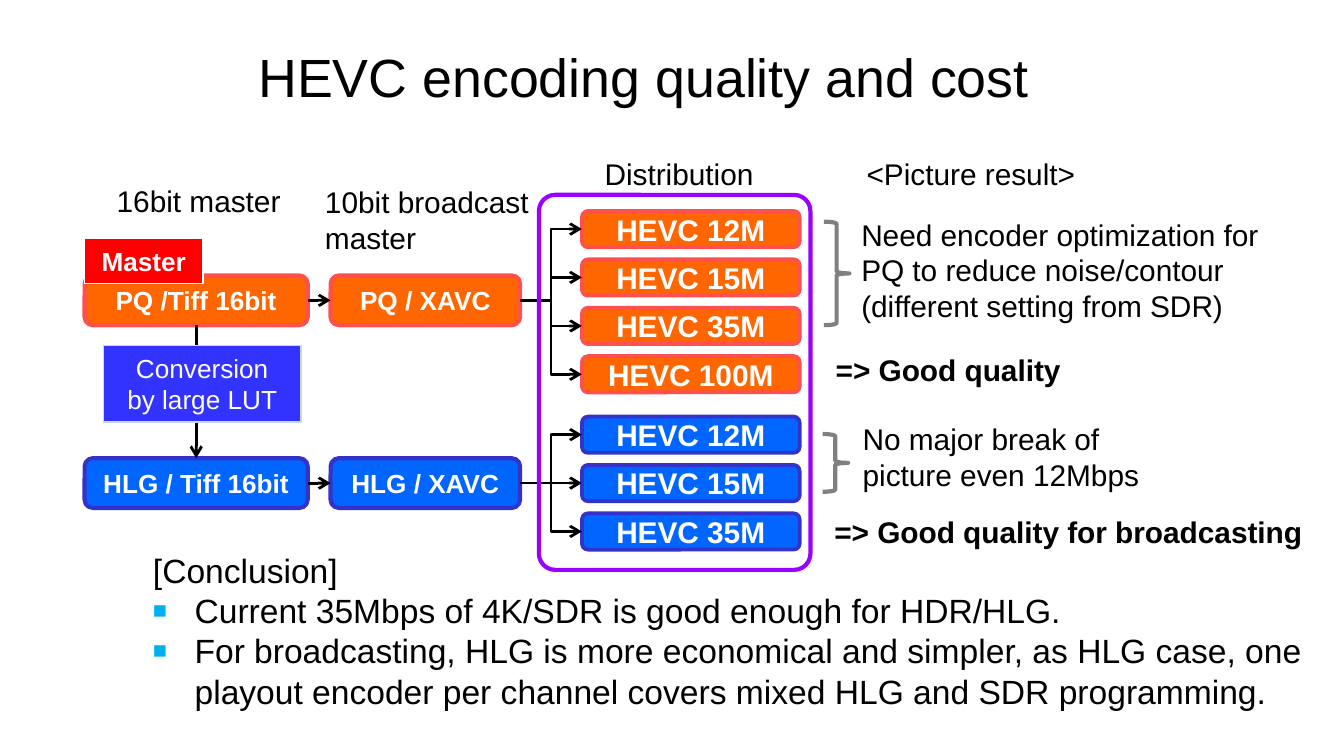
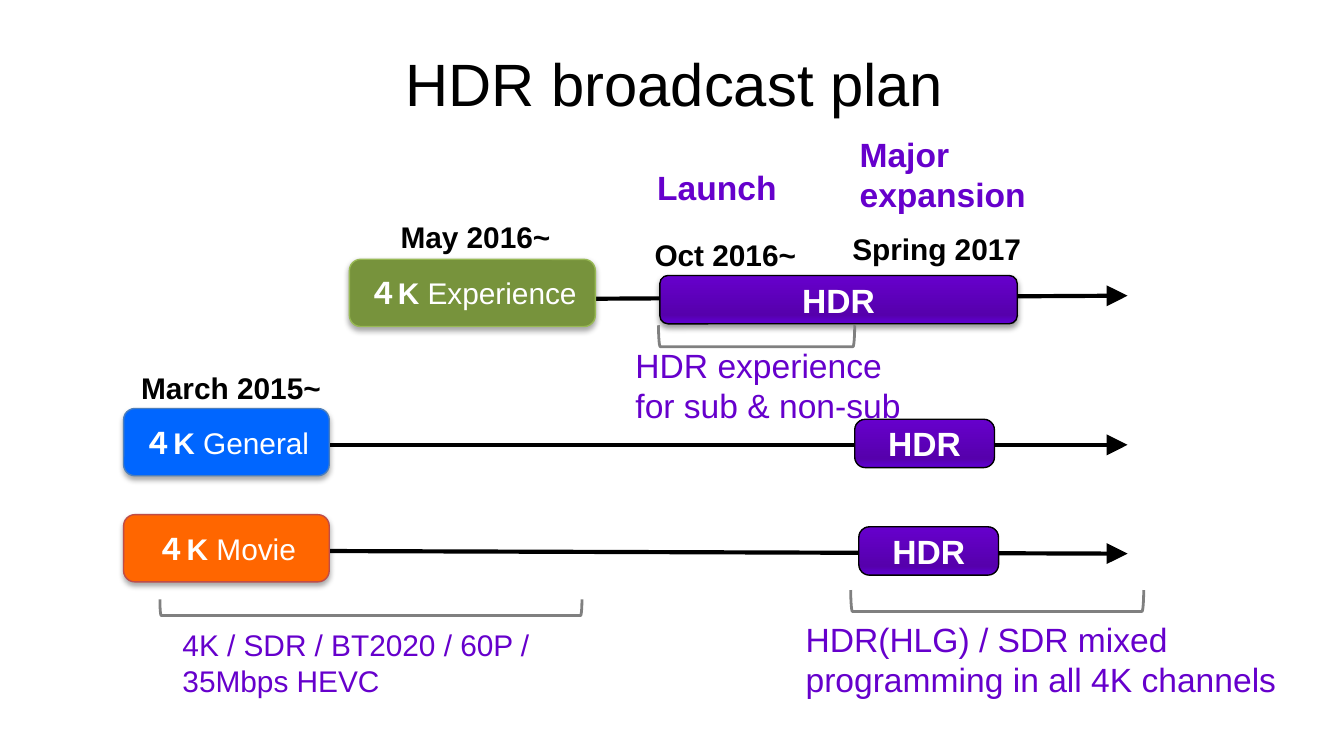
from copy import deepcopy

from lxml.etree import SubElement
from pptx import Presentation
from pptx.dml.color import RGBColor
from pptx.enum.shapes import MSO_CONNECTOR as CONNECTOR, MSO_SHAPE as SHAPE
from pptx.enum.text import MSO_ANCHOR as ANCHOR, PP_ALIGN as ALIGN
from pptx.oxml.ns import qn
from pptx.util import Inches, Pt

SLIDE_W = 10
SLIDE_H = SLIDE_W * 9 / 16
FONT = "Arial"
BLACK = RGBColor(0x00, 0x00, 0x00)
WHITE = RGBColor(0xFF, 0xFF, 0xFF)
GRAY = RGBColor(0x80, 0x80, 0x80)
ORANGE = RGBColor(0xFF, 0x66, 0x00)
CORAL = RGBColor(0xFF, 0x50, 0x50)
BLUE = RGBColor(0x00, 0x66, 0xFF)
SKY = RGBColor(0x00, 0xB0, 0xF0)
INDIGO = RGBColor(0x33, 0x33, 0xCC)
LUT_BLUE = RGBColor(0x33, 0x33, 0xFF)
PALE_BLUE = RGBColor(0xC6, 0xD9, 0xF1)
RED = RGBColor(0xFF, 0x00, 0x00)
VIOLET = RGBColor(0x99, 0x00, 0xFF)
PURPLE = RGBColor(0x66, 0x00, 0xCC)
GREEN = RGBColor(0x77, 0x93, 0x3C)
GREEN_EDGE = RGBColor(0x98, 0xB9, 0x55)
BLUE_EDGE = RGBColor(0x4B, 0x7E, 0xBC)
RED_EDGE = RGBColor(0xBF, 0x4C, 0x48)
HDR_GRADIENT = [(0, RGBColor(0x61, 0x00, 0xD6)),
                (0.18, RGBColor(0x56, 0x00, 0xAC)), (1, PURPLE)]

# Slide 1: each chain runs master -> broadcast master -> HEVC versions
CHAINS = [
    dict(top=2.05, fill=ORANGE, edge=CORAL, master="PQ /Tiff 16bit",
         broadcast="PQ / XAVC", first_version=1.57,
         versions=["HEVC 12M", "HEVC 15M", "HEVC 35M", "HEVC 100M"]),
    dict(top=3.41, fill=BLUE, edge=INDIGO, master="HLG / Tiff 16bit",
         broadcast="HLG / XAVC", first_version=3.1,
         versions=["HEVC 12M", "HEVC 15M", "HEVC 35M"]),
]
MASTER_X, MASTER_W = 0.63, 1.66
BROADCAST_X, BROADCAST_W = 2.46, 1.41
STAGE_H = 0.37
VERSION_X, VERSION_W, VERSION_H, VERSION_PITCH = 4.33, 1.62, 0.27, 0.36
ENCODING_LABELS = [  # box, lines, bold
    ((0.77, 1.31, 1.46, 0.37), ["16bit master"], False),
    ((2.32, 1.32, 1.77, 0.64), ["10bit broadcast", "master"], False),
    ((4.4, 1.11, 1.55, 0.37), ["Distribution"], False),
    ((6.35, 1.11, 2.16, 0.37), ["<Picture result>"], False),
    ((6.31, 1.56, 3.35, 0.91),
     ["Need encoder optimization for PQ to reduce noise/contour "
      "(different setting from SDR)"], False),
    ((6.12, 2.57, 1.9, 0.37), ["=> Good quality"], True),
    ((6.32, 3.08, 2.59, 0.64), ["No major break of picture even 12Mbps"], False),
    ((6.11, 3.77, 3.73, 0.37), ["=> Good quality for broadcasting"], True),
]
BRACES = [(6.13, 1.65, 0.19, 0.77), (6.12, 3.23, 0.19, 0.43)]
CONCLUSION = [
    "[Conclusion]",
    "Current 35Mbps of 4K/SDR is good enough for HDR/HLG.",
    "For broadcasting, HLG is more economical and simpler, as HLG case, one "
    "playout encoder per channel covers mixed HLG and SDR programming.",
]

# Slide 2
ARROW_END = 8.39
TIMELINES = [(3.19, 2.23, 2.2), (2.31, 3.31, 3.31), (2.31, 4.1, 4.12)]  # x, y, end y
CHANNELS = [  # name, left, top, width, fill, edge
    ("Experience", 2.6, 1.93, 1.83, GREEN, GREEN_EDGE),
    ("General", 0.92, 3.04, 1.53, BLUE, BLUE_EDGE),
    ("Movie", 0.92, 3.83, 1.53, ORANGE, RED_EDGE),
]
CHANNEL_H, HDR_H = 0.5, 0.36
HDR_BARS = [  # left, top, width, corner, shadowed
    (4.91, 2.05, 2.66, 0.17, True),
    (6.36, 3.12, 1.04, 0.22, False),
    (6.39, 3.92, 1.04, 0.22, False),
]
DATES = [
    ("March 2015~", (1.05, 2.75, 1.55, 0.27), ALIGN.LEFT),
    ("May 2016~", (2.98, 1.63, 1.35, 0.27), ALIGN.LEFT),
    ("Oct 2016~", (4.87, 1.76, 1.58, 0.27), ALIGN.LEFT),
    ("Spring 2017", (6.13, 1.72, 1.68, 0.27), ALIGN.CENTER),
]
PLAN_NOTES = [  # lines, box, size, bold
    (["4K / SDR / BT2020 / 60P / 35Mbps HEVC"], (1.15, 4.61, 3, 0.64), 16, False),
    (["HDR experience", "for sub & non-sub"], (4.34, 2.51, 2.75, 0.71), 18, False),
    (["HDR(HLG) / SDR mixed programming in all 4K channels"],
     (5.85, 4.55, 3.79, 0.71), 18, False),
    (["Major expansion"], (6.05, 0.94, 1.93, 0.71), 18, True),
    (["Launch"], (4.7, 1.19, 1.27, 0.4), 18, True),
]
BRACKETS = [(1.19, 4.46, 3.14, 0.12), (4.9, 2.42, 1.46, 0.16),
            (6.33, 4.39, 2.18, 0.16)]


def inches(*lengths):
    return [Inches(length) for length in lengths]


def add_run(paragraph, text, size, color=BLACK, bold=False):
    run = paragraph.add_run()
    run.text = text
    run.font.name, run.font.size, run.font.bold = FONT, Pt(size), bold
    run.font.color.rgb = color


def write(shape, lines, size, color=BLACK, bold=False, align=ALIGN.LEFT,
          anchor=ANCHOR.TOP, inset=None):
    """Each line is a string, or a list of (text, bold) runs."""
    frame = shape.text_frame
    frame.word_wrap, frame.vertical_anchor = True, anchor
    if inset is not None:
        frame.margin_left = frame.margin_right = Inches(inset)
        frame.margin_top = frame.margin_bottom = Inches(inset)
    for index, line in enumerate(lines):
        paragraph = frame.add_paragraph() if index else frame.paragraphs[0]
        paragraph.alignment = align
        for text, weight in [(line, bold)] if isinstance(line, str) else line:
            add_run(paragraph, text, size, color, weight)
    return frame


def add_text(slide, box, lines, size, **style):
    return write(slide.shapes.add_textbox(*inches(*box)), lines, size, **style)


def add_title(slide, text, left, top, height, size):
    add_text(slide, (left, top, SLIDE_W * 0.85, height), [text], size,
             align=ALIGN.CENTER, anchor=ANCHOR.MIDDLE)


def add_shape(slide, kind, box, fill, edge, width, corner=None):
    shape = slide.shapes.add_shape(kind, *inches(*box))
    shape.shadow.inherit = False
    if fill is None:
        shape.fill.background()
    else:
        shape.fill.solid()
        shape.fill.fore_color.rgb = fill
    shape.line.color.rgb, shape.line.width = edge, Pt(width)
    if corner is not None:
        shape.adjustments[0] = corner
    return shape


def add_box(slide, box, lines, size, fill, edge, width=2, bold=True,
            kind=SHAPE.ROUNDED_RECTANGLE, corner=None, inset=None):
    shape = add_shape(slide, kind, box, fill, edge, width, corner)
    write(shape, lines, size, WHITE, bold, ALIGN.CENTER, ANCHOR.MIDDLE, inset)
    return shape


def add_arrow(slide, start, end, kind=CONNECTOR.STRAIGHT, head="arrow",
              head_size="med", width=1.5):
    arrow = slide.shapes.add_connector(kind, *inches(*start, *end))
    arrow.line.color.rgb, arrow.line.width = BLACK, Pt(width)
    SubElement(arrow.line._get_or_add_ln(), qn("a:tailEnd"), type=head,
               w=head_size, len=head_size)
    SubElement(arrow._element.spPr, qn("a:effectLst"))


def add_bullet(paragraph):
    properties = paragraph._p.get_or_add_pPr()
    properties.set("marL", str(Inches(0.31)))
    properties.set("indent", str(-Inches(0.31)))
    color = SubElement(properties, qn("a:buClr"))
    SubElement(color, qn("a:srgbClr"), val=str(SKY))
    SubElement(properties, qn("a:buSzPct"), val="70000")
    SubElement(properties, qn("a:buFont"), typeface=FONT)
    SubElement(properties, qn("a:buChar"), char="■")


def add_shadow(shape, opacity):
    effects = shape._element.spPr.find(qn("a:effectLst"))
    shadow = SubElement(effects, qn("a:outerShdw"), blurRad=str(Pt(3.1)),
                        dist=str(Pt(1.7)), dir="5400000", rotWithShape="0")
    color = SubElement(shadow, qn("a:srgbClr"), val=str(BLACK))
    SubElement(color, qn("a:alpha"), val=str(opacity * 1000))


def fill_gradient(shape, stops):
    shape.fill.gradient()
    shape.fill.gradient_angle = 90
    stop_list = shape._element.spPr.find(".//" + qn("a:gsLst"))
    while len(stop_list) < len(stops):
        stop_list.append(deepcopy(stop_list[0]))
    for stop, (position, color) in zip(shape.fill.gradient_stops, stops):
        stop.position, stop.color.rgb = position, color


def add_bracket(slide, left, top, width, height):
    """Bracket opening upwards that covers the given area."""
    shift = (width - height) / 2
    bracket = add_shape(slide, SHAPE.LEFT_BRACKET,
                        (left + shift, top - shift, height, width), None, GRAY, 1.5)
    bracket.rotation = 270


def add_chain(slide, chain):
    fill, edge, top = chain["fill"], chain["edge"], chain["top"]
    middle = top + STAGE_H / 2
    broadcast_end = BROADCAST_X + BROADCAST_W
    for left, width, name in [(MASTER_X, MASTER_W, chain["master"]),
                              (BROADCAST_X, BROADCAST_W, chain["broadcast"])]:
        add_box(slide, (left, top, width, STAGE_H), [name], 14, fill, edge, 2.25)
    add_arrow(slide, (MASTER_X + MASTER_W, middle), (BROADCAST_X, middle))
    for row, name in enumerate(chain["versions"]):
        y = chain["first_version"] + row * VERSION_PITCH
        add_box(slide, (VERSION_X, y, VERSION_W, VERSION_H), [name], 16, fill, edge)
        add_arrow(slide, (broadcast_end, middle), (VERSION_X, y + VERSION_H / 2),
                  CONNECTOR.ELBOW)


def build_encoding(slide):
    add_title(slide, "HEVC encoding quality and cost", 0.54, 0.29, 0.55, 28.8)
    for chain in CHAINS:
        add_chain(slide, chain)
    master_middle = MASTER_X + MASTER_W / 2
    add_arrow(slide, (master_middle, CHAINS[0]["top"] + STAGE_H),
              (master_middle, CHAINS[1]["top"]))
    add_box(slide, (0.77, 2.57, 1.47, 0.57), ["Conversion", "by large LUT"], 14,
            LUT_BLUE, PALE_BLUE, 0.75, bold=False, kind=SHAPE.RECTANGLE)
    add_box(slide, (MASTER_X, 1.77, 0.88, 0.34), ["Master"], 14, RED, WHITE, 0.75,
            kind=SHAPE.RECTANGLE)
    for box in BRACES:
        add_shape(slide, SHAPE.RIGHT_BRACE, box, None, GRAY, 2.25)
    add_shape(slide, SHAPE.ROUNDED_RECTANGLE, (4.01, 1.45, 2.02, 2.79), None,
              VIOLET, 2.25, corner=0.06)
    for box, lines, bold in ENCODING_LABELS:
        frame = add_text(slide, box, lines, 16, bold=bold)
        frame.word_wrap = not bold
    frame = add_text(slide, (1.04, 4.04, 8.8, 1.31), CONCLUSION, 18)
    for paragraph in frame.paragraphs[1:]:
        add_bullet(paragraph)


def build_plan(slide):
    add_title(slide, "HDR broadcast plan", 0.77, 0.26, 0.71, 32)
    for left, y, end_y in TIMELINES:
        add_arrow(slide, (left, y), (ARROW_END, end_y), head="triangle",
                  head_size="lg", width=2.25)
    for text, box, align in DATES:
        add_text(slide, box, [text], 16, bold=True, align=align, inset=0)
    for left, top, width, corner, shadowed in HDR_BARS:
        bar = add_box(slide, (left, top, width, HDR_H), ["HDR"], 18, PURPLE, BLACK,
                      0.75, corner=corner, inset=0)
        fill_gradient(bar, HDR_GRADIENT)
        if shadowed:
            add_shadow(bar, 38)
    for bracket in BRACKETS:
        add_bracket(slide, *bracket)
    for lines, box, size, bold in PLAN_NOTES:
        frame = add_text(slide, box, lines, size, color=PURPLE, bold=bold,
                         anchor=ANCHOR.MIDDLE)
        frame._txBody.bodyPr.set("anchorCtr", "1")
    for name, left, top, width, fill, edge in CHANNELS:
        channel = add_box(slide, (left, top, width, CHANNEL_H),
                          [[("４K ", True), (name, False)]], 16, fill, edge, 0.75)
        add_shadow(channel, 35)


def main():
    presentation = Presentation()
    presentation.slide_width, presentation.slide_height = inches(SLIDE_W, SLIDE_H)
    for build in (build_encoding, build_plan):
        build(presentation.slides.add_slide(presentation.slide_layouts[6]))
    presentation.save("out.pptx")


if __name__ == "__main__":
    main()
